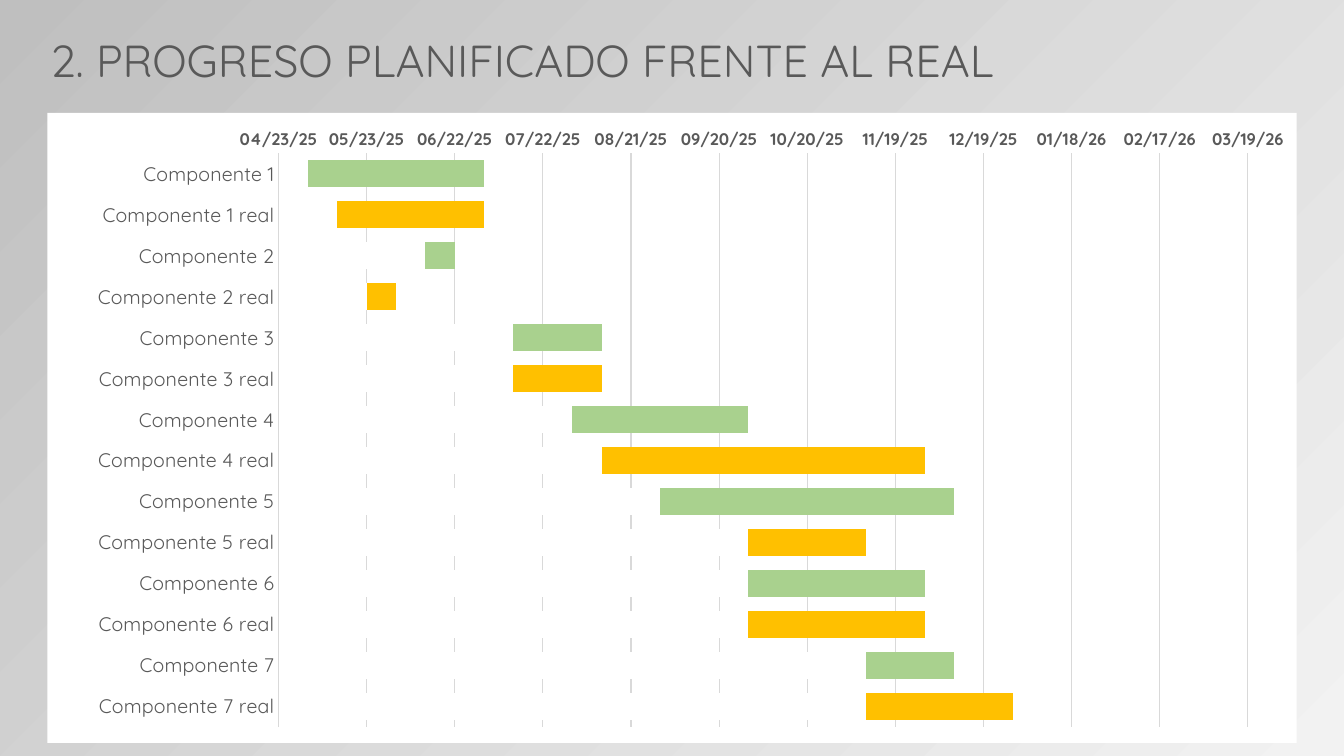
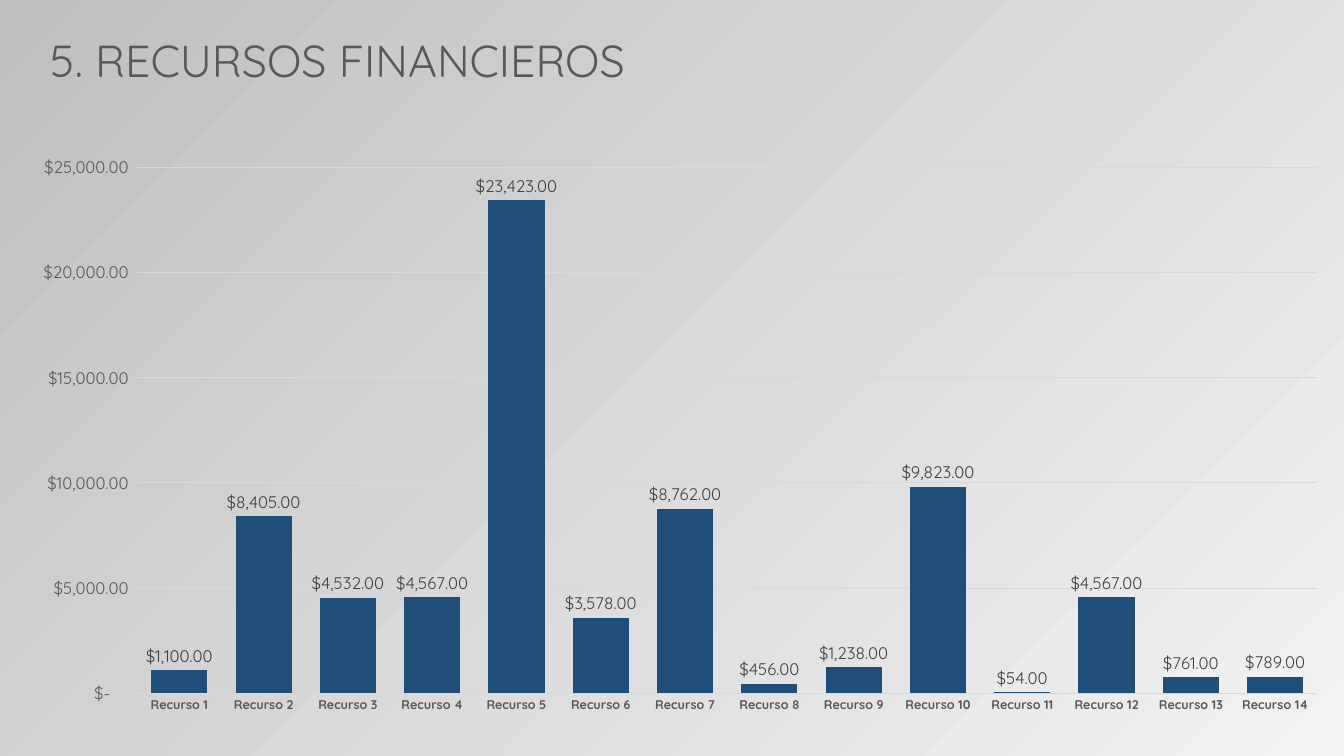
from pptx import Presentation
from pptx import util as u
from pptx.chart.data import CategoryChartData
from pptx.dml.color import RGBColor
from pptx.enum import chart as ch, text
from pptx.oxml import parse_xml
from pptx.oxml.ns import nsdecls, qn

FONT = "Quicksand"
GREY_TEXT = RGBColor(0x59, 0x59, 0x59)
LABEL_TEXT = RGBColor(0x40, 0x40, 0x40)
RULE = RGBColor(0xD9, 0xD9, 0xD9)
WHITE = RGBColor(0xFF, 0xFF, 0xFF)
BLACK = RGBColor(0, 0, 0)
PLANNED = RGBColor(0xA9, 0xD1, 0x8E)
REAL = RGBColor(0xFF, 0xC0, 0x00)
BLUE = RGBColor(0x1F, 0x4E, 0x79)
BG_LIGHT = RGBColor(0xF2, 0xF2, 0xF2)
BG_DARK = RGBColor(0xBF, 0xBF, 0xBF)

DATE_FORMAT = "mm/dd/yy;@"
MONEY_FORMAT = r'_("$"* #,##0.00_);_("$"* \(#,##0.00\);_("$"* "-"??_);_(@_)'

# Start and end of each component as date serials: planned, then real
SCHEDULE = [
    ((45780, 45840), (45790, 45840)),
    ((45820, 45830), (45800, 45810)),
    ((45850, 45880), (45850, 45880)),
    ((45870, 45930), (45880, 45990)),
    ((45900, 46000), (45930, 45970)),
    ((45930, 45990), (45930, 45990)),
    ((45970, 46000), (45970, 46020)),
]
AXIS_START, AXIS_END, AXIS_STEP = 45770, 46100, 30

RESOURCES = [1100, 8405, 4532, 4567, 23423, 3578, 8762,
             456, 1238, 9823, 54, 4567, 761, 789]


def set_font(font, size, color, bold=False):
    font.name, font.size, font.bold = FONT, u.Pt(size), bold
    font.color.rgb = color


def add_slide(prs):
    s = prs.slides.add_slide(prs.slide_layouts[6])
    fill = s.background.fill
    fill.gradient()
    fill.gradient_angle = 135
    light, dark = fill.gradient_stops
    light.color.rgb, dark.color.rgb = BG_LIGHT, BG_DARK
    rgb = next(s.background.element.iter(qn("a:srgbClr")))
    rgb.append(parse_xml(f'<a:alpha {nsdecls("a")} val="40000"/>'))
    return s


def add_title(s, title, width):
    sp = s.shapes.add_textbox(u.Inches(0.4), u.Inches(0.28),
                              u.Inches(width), u.Inches(0.64))
    tf = sp.text_frame
    tf.text = title
    tf.word_wrap = True
    tf.auto_size = text.MSO_AUTO_SIZE.SHAPE_TO_FIT_TEXT
    set_font(tf.paragraphs[0].runs[0].font, 32, GREY_TEXT)


def style_axis(axis, size, bold=False):
    axis.major_tick_mark = axis.minor_tick_mark = ch.XL_TICK_MARK.NONE
    set_font(axis.tick_labels.font, size, GREY_TEXT, bold)


def set_line(fmt):
    fmt.line.color.rgb = RULE
    fmt.line.width = u.Pt(0.75)


def add_bar_chart(s, kind, box, categories, series, size, cat_font, val_font,
                  number_format, area_fill):
    """Add a chart; series pairs values with one colour per point."""
    data = CategoryChartData()
    data.categories = categories
    for n, (values, _) in enumerate(series, 1):
        data.add_series(f"Series {n}", values)
    chart = s.shapes.add_chart(kind, *map(u.Inches, box), data).chart
    chart.has_legend = chart.has_title = False
    set_font(chart.font, size, BLACK)
    chart.element.find(qn("c:chart")).addnext(parse_xml(
        f'<c:spPr {nsdecls("c", "a")}>{area_fill}<a:ln><a:noFill/></a:ln></c:spPr>'))

    plot = chart.plots[0]
    plot.gap_width = 50
    plot.vary_by_categories = False
    for ser, (_, colors) in zip(plot.series, series):
        ser.invert_if_negative = False
        ser.format.fill.solid()
        ser.format.fill.fore_color.rgb = colors[-1]
        for i, color in enumerate(colors):
            if color != colors[-1]:
                fill = ser.points[i].format.fill
                fill.solid()
                fill.fore_color.rgb = color

    style_axis(chart.category_axis, *cat_font)
    set_line(chart.category_axis.format)
    axis = chart.value_axis
    style_axis(axis, *val_font)
    axis.format.line.fill.background()
    axis.has_major_gridlines = True
    set_line(axis.major_gridlines.format)
    axis.tick_labels.number_format = number_format
    axis.tick_labels.number_format_is_linked = False
    return chart


def set_inner_plot(chart, x, y, w, h):
    """Fix the plot area, in fractions of the chart."""
    area = next(chart.element.iter(qn("c:plotArea")))
    for old in area.findall(qn("c:layout")):
        area.remove(old)
    modes = "".join(f'<c:{m} val="edge"/>' for m in ("xMode", "yMode"))
    sizes = "".join(f'<c:{k} val="{v}"/>' for k, v in zip("xywh", (x, y, w, h)))
    area.insert(0, parse_xml(
        f'<c:layout {nsdecls("c")}><c:manualLayout><c:layoutTarget val="inner"/>'
        f'{modes}{sizes}</c:manualLayout></c:layout>'))


def progress_slide(prs):
    s = add_slide(prs)
    names = [f"Componente {n}{suffix}" for n in range(1, len(SCHEDULE) + 1)
             for suffix in ("", " real")]
    spans = [span for pair in SCHEDULE for span in pair]
    starts, ends = zip(*spans)
    # White bars up to each start hide the first part of the coloured ones
    series = [(ends, [PLANNED, REAL] * len(SCHEDULE)), (starts, [WHITE])]
    chart = add_bar_chart(
        s, ch.XL_CHART_TYPE.BAR_CLUSTERED, (0.47, 1.12, 12.39, 6.25), names,
        series, 14, (14,), (12, True), DATE_FORMAT,
        '<a:solidFill><a:srgbClr val="FFFFFF"/></a:solidFill>')
    chart.plots[0].overlap = 100
    chart.category_axis.reverse_order = True
    axis = chart.value_axis
    axis.minimum_scale, axis.maximum_scale = AXIS_START, AXIS_END
    axis.major_unit = AXIS_STEP
    set_inner_plot(chart, 0.185, 0.064, 0.776, 0.911)
    add_title(s, "2. PROGRESO PLANIFICADO FRENTE AL REAL", 11.52)


def resources_slide(prs):
    s = add_slide(prs)
    names = [f"Recurso {n}" for n in range(1, len(RESOURCES) + 1)]
    chart = add_bar_chart(
        s, ch.XL_CHART_TYPE.COLUMN_CLUSTERED, (0.12, 1.44, 13.21, 5.75), names,
        [(RESOURCES, [BLUE])], 10, (9, True), (12,), MONEY_FORMAT, "<a:noFill/>")
    labels = chart.plots[0].series[0].data_labels
    labels.show_value = True
    labels.position = ch.XL_LABEL_POSITION.OUTSIDE_END
    labels.number_format = MONEY_FORMAT
    labels.number_format_is_linked = False
    set_font(labels.font, 12, LABEL_TEXT)
    add_title(s, "5. RECURSOS FINANCIEROS", 8.13)


def main():
    prs = Presentation()
    prs.slide_width, prs.slide_height = u.Inches(13.33), u.Inches(7.5)
    progress_slide(prs)
    resources_slide(prs)
    prs.save("out.pptx")


if __name__ == "__main__":
    main()
